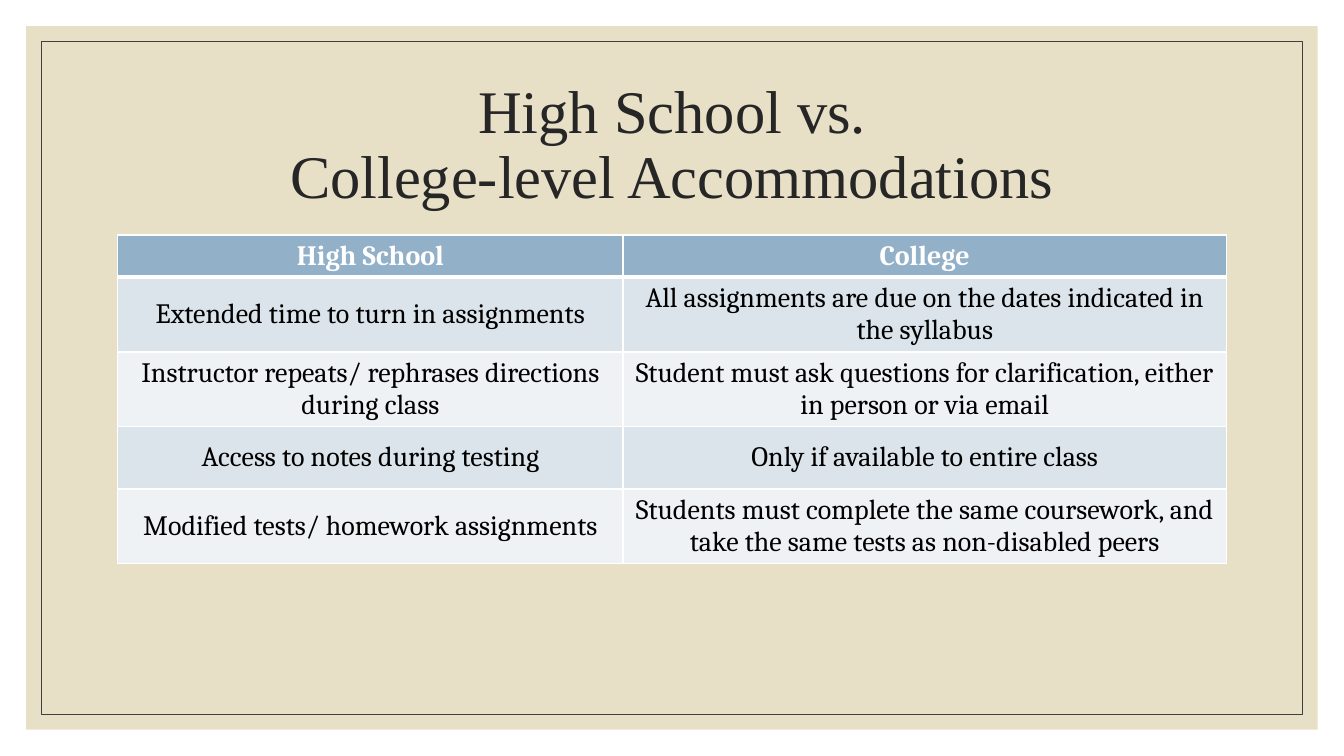
"""Build a slide that compares high school and college accommodations."""
from dataclasses import dataclass
from typing import Optional

from lxml.etree import SubElement
from pptx import Presentation
from pptx.dml.color import RGBColor
from pptx.enum.shapes import MSO_SHAPE as Shape
from pptx.enum.text import MSO_ANCHOR as Anchor, MSO_AUTO_SIZE as Fit, PP_ALIGN as Align
from pptx.oxml.ns import qn
from pptx.util import Cm, Pt

WHITE = RGBColor(0xFF, 0xFF, 0xFF)
BLACK = RGBColor(0, 0, 0)
SAND = RGBColor(0xE7, 0xE0, 0xC7)
GREY = RGBColor(0x40, 0x40, 0x40)
INK = RGBColor(0x26, 0x26, 0x26)
BLUE = RGBColor(0x92, 0xB0, 0xC8)
BANDS = (RGBColor(0xEE, 0xF2, 0xF5), RGBColor(0xDC, 0xE4, 0xEB))

WIDTH, HEIGHT = 33.87, 19.05
LEFT, SPAN = 2.97, 27.94
COLS = (12.73, 15.21)


@dataclass
class Panel:
    inset: float
    fill: Optional[RGBColor] = None
    line: Optional[RGBColor] = None


@dataclass
class Row:
    height: float
    school: str
    college: str


PANELS = (Panel(0.66, fill=SAND), Panel(1.04, line=GREY))
ROWS = (
    Row(0.79, "High School", "College"),
    Row(1.37, "Extended time to turn in assignments",
        "All assignments are due on the dates indicated in the syllabus"),
    Row(1.6, "Instructor repeats/ rephrases directions during class",
        "Student must ask questions for clarification, either in person or via email"),
    Row(1.57, "Access to notes during testing", "Only if available to entire class"),
    Row(1.55, "Modified tests/ homework assignments",
        "Students must complete the same coursework, and take the same tests as non-disabled peers"),
)


def write(frame, text: str, *, font: str, size: float, color: RGBColor,
          bold: bool = False, space: Optional[float] = None) -> None:
    """Put centred, formatted text in a frame."""
    para = frame.paragraphs[0]
    para.text = text
    para.alignment = Align.CENTER
    para.line_spacing = space
    for run in para.runs:
        run.font.name = font
        run.font.size = Pt(size)
        run.font.bold = bold
        run.font.color.rgb = color


def draw(slide, panel: Panel) -> None:
    """Draw a rectangle with an equal inset on all sides."""
    gap = panel.inset
    box = slide.shapes.add_shape(Shape.RECTANGLE, Cm(gap), Cm(gap),
                                 Cm(WIDTH - 2 * gap), Cm(HEIGHT - 2 * gap))
    box.shadow.inherit = False
    if panel.fill:
        box.fill.solid()
        box.fill.fore_color.rgb = panel.fill
    else:
        box.fill.background()
    if panel.line:
        box.line.color.rgb = panel.line
        box.line.width = Pt(0.5)
    else:
        box.line.fill.background()


def edge(cell, side: str, width: float) -> None:
    """Give one side of a cell a white border."""
    props = cell._tc.get_or_add_tcPr()
    line = SubElement(props, qn(f"a:ln{side}"), w=str(Pt(width)))
    fill = SubElement(line, qn("a:solidFill"))
    SubElement(fill, qn("a:srgbClr"), val=str(WHITE))


def head(slide) -> None:
    """Place and format the title in front of the panels."""
    title = slide.shapes.title
    title.left, title.top = Cm(LEFT), Cm(1.78)
    title.width, title.height = Cm(SPAN), Cm(3.81)
    frame = title.text_frame
    frame.word_wrap = True
    frame.auto_size = Fit.NONE
    frame.vertical_anchor = Anchor.MIDDLE
    write(frame, "High School vs.\vCollege-level Accommodations",
          font="Times New Roman", size=43.2, color=INK, space=0.9)
    title.element.getparent().append(title.element)


def grid(slide) -> None:
    """Add the table of accommodations."""
    table = slide.shapes.add_table(len(ROWS), len(COLS), Cm(LEFT), Cm(5.92),
                                   Cm(SPAN), Cm(8.51)).table
    for col, width in zip(table.columns, COLS):
        col.width = Cm(width)
    for i, row in enumerate(ROWS):
        table.rows[i].height = Cm(row.height)
        top = i == 0
        for j, text in enumerate((row.school, row.college)):
            cell = table.cell(i, j)
            for side in "LRTB":
                thick = (top and side == "B") or (i == 1 and side == "T")
                edge(cell, side, 3 if thick else 1)
            cell.fill.solid()
            cell.fill.fore_color.rgb = BLUE if top else BANDS[i % 2]
            cell.vertical_anchor = Anchor.TOP if top else Anchor.MIDDLE
            write(cell.text_frame, text, font="Cambria", size=20,
                  color=WHITE if top else BLACK, bold=top)


def main() -> None:
    """Build and save the slide."""
    deck = Presentation()
    deck.slide_width, deck.slide_height = Cm(WIDTH), Cm(HEIGHT)
    slide = deck.slides.add_slide(deck.slide_layouts[5])
    for panel in PANELS:
        draw(slide, panel)
    head(slide)
    grid(slide)
    deck.save("out.pptx")


if __name__ == "__main__":
    main()
